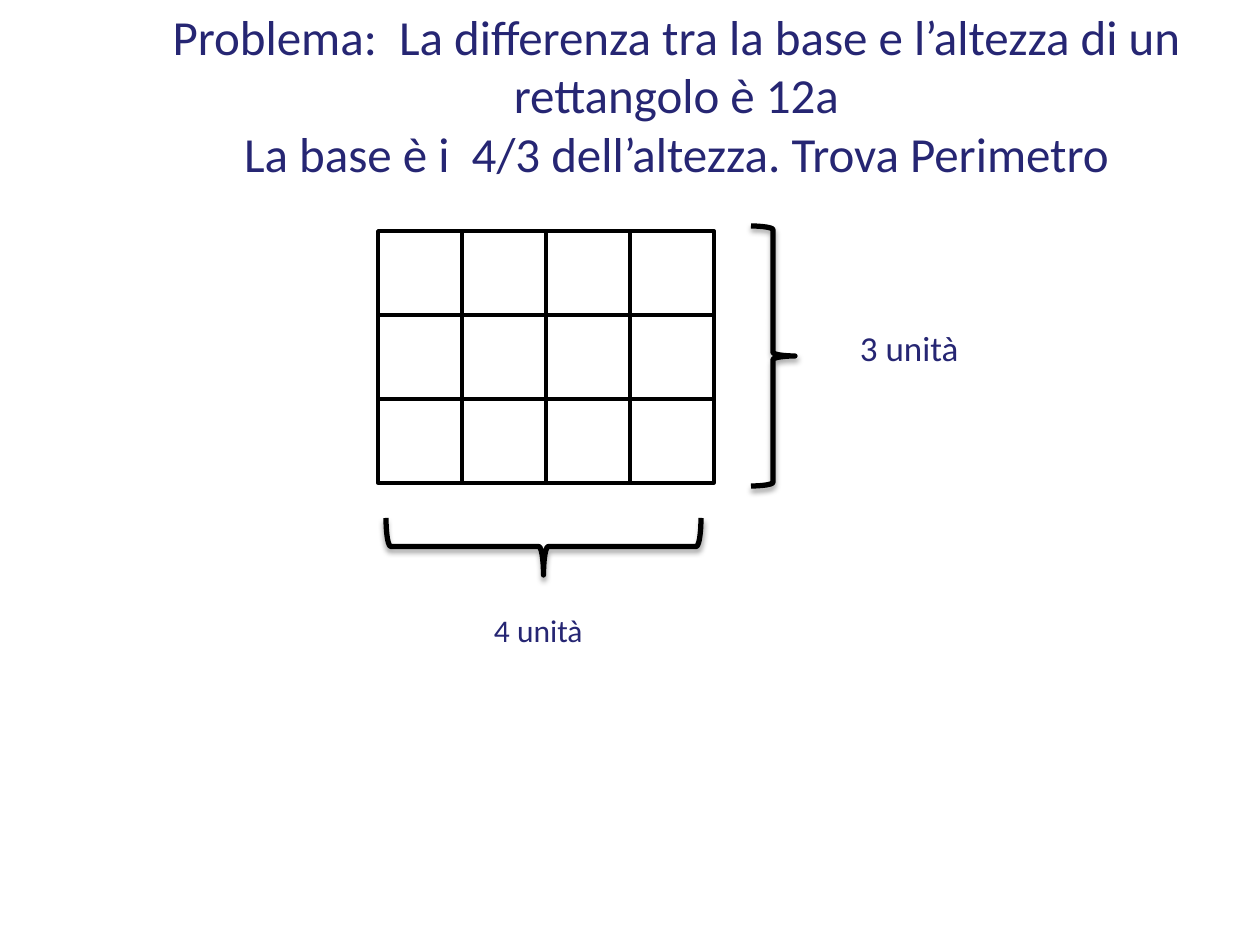
from lxml import etree
from pptx import Presentation
from pptx import util as u
from pptx.dml.color import RGBColor
from pptx.enum import shapes, text
from pptx.oxml.ns import qn

SCALE = 914400 / 126
COLORS = {"ink": "262673", "line": "000000", "cell": "FFFFFF"}
FONT = "Calibri"
SHADOW = {"blurRad": u.Pt(3.1), "dist": u.Pt(1.8), "dir": 90 * 60000, "rotWithShape": 0}


def px(length):
    """Turn px into EMU."""
    return u.Emu(round(length * SCALE))


def color(name):
    """Look up a colour by name."""
    return RGBColor.from_string(COLORS[name])


def apply(target, values):
    """Set attributes of target from a dict."""
    for key, value in values.items():
        setattr(target, key, value)


def add_outlined(slide, preset, box, weight):
    """Add an unshadowed preset shape with a dark outline."""
    outlined = slide.shapes.add_shape(preset, *map(px, box))
    outlined.shadow.inherit = False
    outlined.line.color.rgb = color("line")
    outlined.line.width = u.Pt(weight)
    return outlined


def add_grid(slide, box, columns, rows):
    """Fill the box with the unit squares of the rectangle."""
    left, top, width, height = box
    side_x, side_y = width // columns, height // rows
    for row in range(rows):
        for column in range(columns):
            place = (left + column * side_x, top + row * side_y, side_x, side_y)
            square = add_outlined(slide, shapes.MSO_SHAPE.RECTANGLE, place, 2)
            square.fill.solid()
            square.fill.fore_color.rgb = color("cell")


def add_brace(slide, box, rotation=0):
    """Add a softly shadowed brace, turned about the centre of its box."""
    brace = add_outlined(slide, shapes.MSO_SHAPE.RIGHT_BRACE, box, 3)
    brace.fill.background()
    brace.rotation = rotation
    effects = brace._element.spPr.find(qn("a:effectLst"))
    values = {key: str(int(value)) for key, value in SHADOW.items()}
    shadow = etree.SubElement(effects, qn("a:outerShdw"), values)
    tint = etree.SubElement(shadow, qn("a:srgbClr"), val=COLORS["line"])
    etree.SubElement(tint, qn("a:alpha"), val="35000")


def add_words(slide, box, lines, size, align=text.PP_ALIGN.LEFT, inset=13):
    """Write one paragraph per line in the box."""
    frame = slide.shapes.add_textbox(*map(px, box)).text_frame
    apply(frame, {"word_wrap": True, "margin_left": px(inset),
                  "vertical_anchor": text.MSO_ANCHOR.TOP})
    frame.text = "\n".join(lines)
    for paragraph in frame.paragraphs:
        paragraph.alignment = align
        apply(paragraph.runs[0].font, {"name": FONT, "size": u.Pt(size)})
        paragraph.runs[0].font.color.rgb = color("ink")


def add_figure(slide, box):
    """Draw the divided rectangle with its braces and unit labels."""
    left, top, width, height = box
    add_brace(slide, (left + 137, top + 158, 57, 315), 90)
    add_words(slide, (left + 82, top + 374, 243, 50), ["4 unità"], 18, inset=34)
    add_brace(slide, (left + width + 37, top - 5, 44, 260))
    add_words(slide, (left + width + 133, top + 89, 287, 55), ["3 unità"], 20)
    add_grid(slide, box, columns=4, rows=3)


def main():
    """Build and save the slide."""
    deck = Presentation()
    apply(deck, {"slide_width": px(1260), "slide_height": px(945)})
    slide = deck.slides.add_slide(deck.slide_layouts[6])
    problem = [
        "Problema:  La differenza tra la base e l’altezza di un rettangolo è 12a",
        "La base è i  4/3 dell’altezza. Trova Perimetro",
    ]
    add_words(slide, (151, 0, 1050, 251), problem, 28, text.PP_ALIGN.CENTER)
    add_figure(slide, (378, 231, 336, 252))
    deck.save("out.pptx")


if __name__ == "__main__":
    main()
